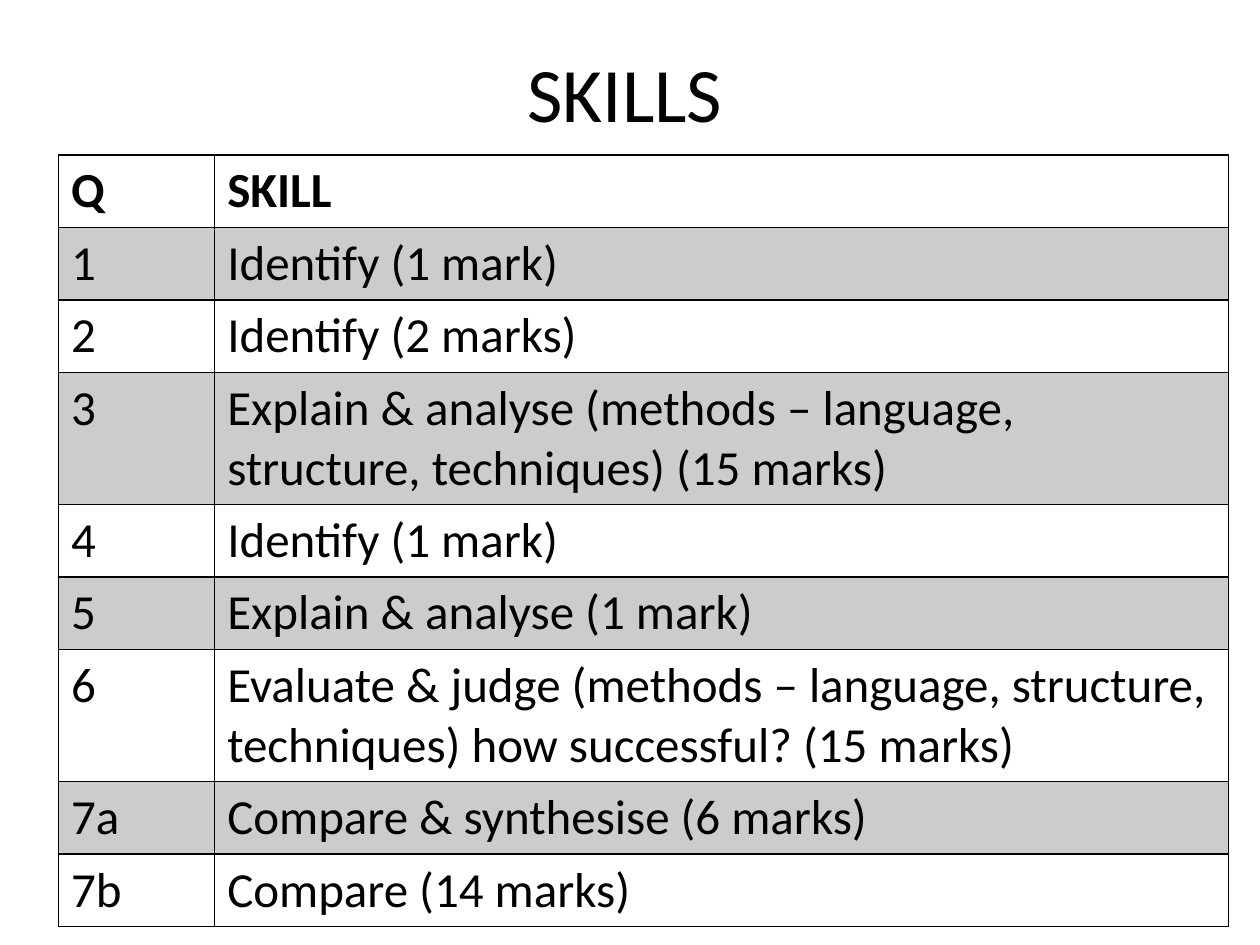
from lxml import etree
from pptx import Presentation
from pptx.dml.color import RGBColor
from pptx.enum.text import MSO_ANCHOR, PP_ALIGN
from pptx.oxml.ns import qn
from pptx.util import Pt

CENTER = PP_ALIGN.CENTER
MIDDLE = MSO_ANCHOR.MIDDLE
BLANK_LAYOUT = 6

SKILLS = [
    ("Q", "SKILL"),
    ("1", "Identify (1 mark)"),
    ("2", "Identify (2 marks)"),
    ("3", "Explain & analyse (methods – language, structure, techniques) (15 marks)"),
    ("4", "Identify (1 mark)"),
    ("5", "Explain & analyse (1 mark)"),
    ("6", "Evaluate & judge (methods – language, structure, techniques) "
          "how successful? (15 marks)"),
    ("7a", "Compare & synthesise (6 marks)"),
    ("7b", "Compare (14 marks)"),
]
TWO_LINE_QUESTIONS = {"3", "6"}


def color(hex_string):
    return RGBColor.from_string(hex_string)


def add_borders(cell, hex_string, width):
    properties = cell._tc.get_or_add_tcPr()
    for position, side in enumerate(("a:lnL", "a:lnR", "a:lnT", "a:lnB")):
        line = etree.Element(qn(side), w=str(Pt(width)))
        fill = etree.SubElement(line, qn("a:solidFill"))
        etree.SubElement(fill, qn("a:srgbClr"), val=hex_string)
        properties.insert(position, line)


class SkillsSlide:
    font_name = "Calibri"
    ink = "000000"
    band_fills = ("FFFFFF", "CCCCCC")
    title_size = 44
    table_size = 28
    row_height = 41.4
    two_line_height = 75.6

    def __init__(self, presentation):
        layout = presentation.slide_layouts[BLANK_LAYOUT]
        self.slide = presentation.slides.add_slide(layout)

    def style(self, paragraph, size, bold=False):
        font = paragraph.font
        font.name = self.font_name
        font.size = Pt(size)
        font.bold = bold
        font.color.rgb = color(self.ink)

    def add_title(self, text, left, top, width, height):
        box = self.slide.shapes.add_textbox(Pt(left), Pt(top), Pt(width), Pt(height))
        frame = box.text_frame
        frame.word_wrap = True
        frame.vertical_anchor = MIDDLE
        paragraph = frame.paragraphs[0]
        paragraph.text = text
        paragraph.alignment = CENTER
        self.style(paragraph, self.title_size)

    def add_table(self, rows, left, top, column_widths):
        heights = [self.two_line_height if question in TWO_LINE_QUESTIONS
                   else self.row_height for question, _ in rows]
        table = self.slide.shapes.add_table(
            len(rows), len(column_widths), Pt(left), Pt(top),
            Pt(sum(column_widths)), Pt(sum(heights))).table
        table.horz_banding = False
        for column, width in zip(table.columns, column_widths):
            column.width = Pt(width)
        for index, (row, texts) in enumerate(zip(table.rows, rows)):
            row.height = Pt(heights[index])
            for cell, text in zip(row.cells, texts):
                cell.text = text
                cell.fill.solid()
                cell.fill.fore_color.rgb = color(self.band_fills[index % 2])
                add_borders(cell, self.ink, 1)
                self.style(cell.text_frame.paragraphs[0], self.table_size, index == 0)


def main():
    presentation = Presentation()
    presentation.slide_width = Pt(720)
    presentation.slide_height = Pt(540)
    skills = SkillsSlide(presentation)
    skills.add_title("SKILLS", 46.8, 0, 620.6, 104.4)
    skills.add_table(SKILLS, 33.4, 88.6, (89.3, 579.2))
    presentation.save("out.pptx")


if __name__ == "__main__":
    main()
